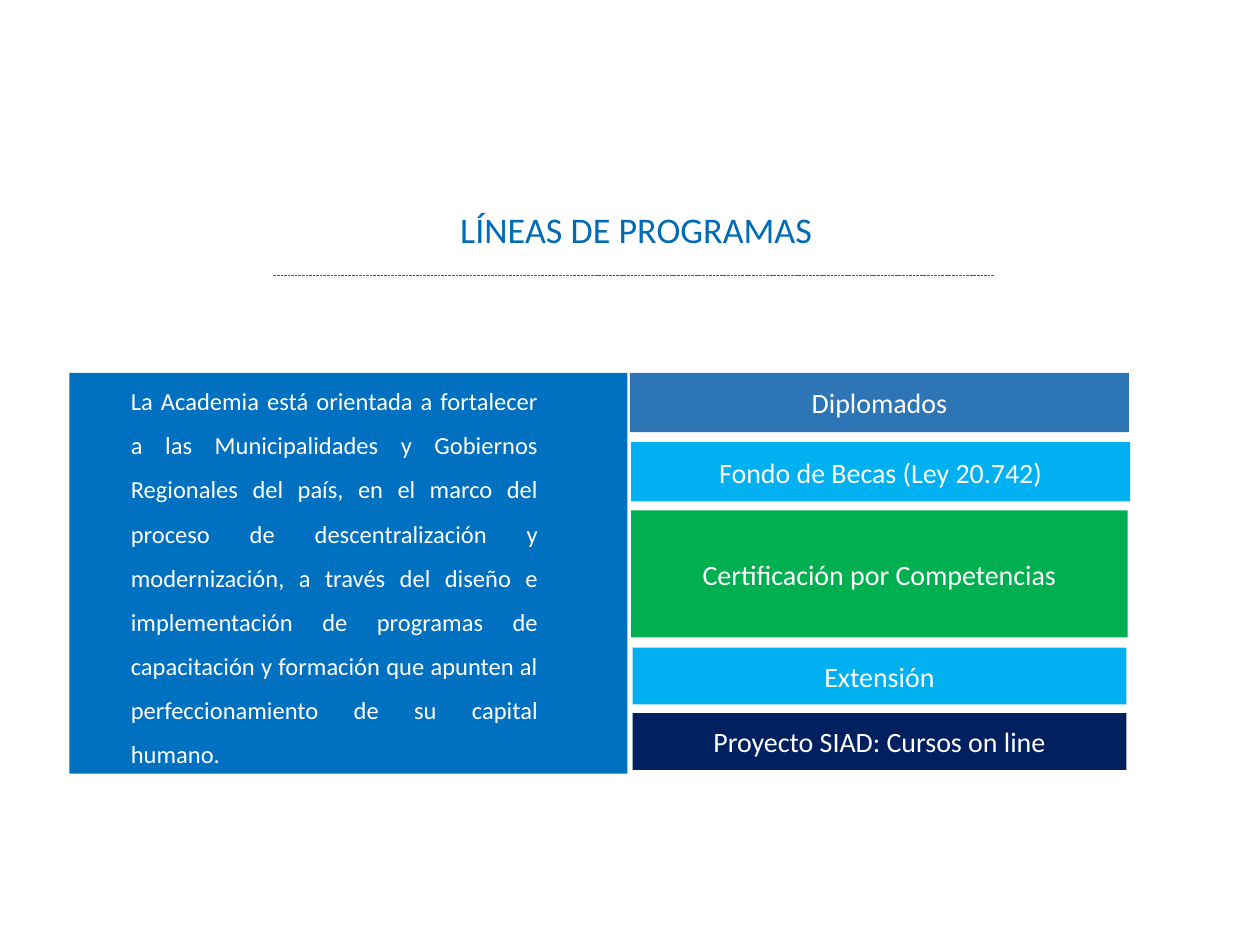
from dataclasses import dataclass

from lxml import etree
from pptx import Presentation, util as u
from pptx.dml.color import RGBColor
from pptx.enum import dml, shapes, text
from pptx.oxml.ns import qn

BLUE = RGBColor(0x00, 0x70, 0xC0)
TITLE_BLUE = RGBColor(0x00, 0x6B, 0xB6)
STEEL = RGBColor(0x2E, 0x75, 0xB6)
SKY = RGBColor(0x00, 0xB0, 0xF0)
GREEN = RGBColor(0x00, 0xB0, 0x50)
NAVY = RGBColor(0x00, 0x20, 0x60)
WHITE = RGBColor(0xFF, 0xFF, 0xFF)

MISSION = (
    "La Academia está orientada a fortalecer a las Municipalidades y Gobiernos "
    "Regionales del país, en el marco del proceso de descentralización y "
    "modernización, a través del diseño e implementación de programas de "
    "capacitación y formación que apunten al perfeccionamiento de su capital humano."
)


@dataclass
class Program:
    label: str
    left: float
    top: float
    width: float
    height: float
    color: RGBColor


PROGRAMS = [
    Program("Diplomados", 5, 2.96, 3.96, 0.47, STEEL),
    Program("Fondo de Becas (Ley 20.742)", 5.01, 3.51, 3.96, 0.47, SKY),
    Program("Certificación por Competencias", 5.01, 4.05, 3.94, 1.01, GREEN),
    Program("Extensión", 5.02, 5.14, 3.92, 0.45, SKY),
    Program("Proyecto SIAD: Cursos on line", 5.02, 5.66, 3.92, 0.45, NAVY),
]


def write(shape, words: str, size: float, color: RGBColor, align, spacing: float,
          anchor=text.MSO_ANCHOR.MIDDLE) -> None:
    frame = shape.text_frame
    frame.word_wrap = True
    frame.vertical_anchor = anchor
    paragraph = frame.paragraphs[0]
    paragraph.alignment = align
    paragraph.line_spacing = spacing
    run = paragraph.add_run()
    run.text = words
    formats = {"name": "Calibri", "size": u.Pt(size), "bold": False}
    for key, value in formats.items():
        setattr(run.font, key, value)
    run.font.color.rgb = color


def add_block(slide, left: float, top: float, width: float, height: float, color: RGBColor):
    block = slide.shapes.add_shape(shapes.MSO_SHAPE.RECTANGLE, u.Inches(left),
                                   u.Inches(top), u.Inches(width), u.Inches(height))
    block.shadow.inherit = False
    block.fill.solid()
    block.fill.fore_color.rgb = color
    block.line.fill.background()
    return block


def add_program(slide, program: Program) -> None:
    block = add_block(slide, program.left, program.top, program.width,
                      program.height, program.color)
    write(block, program.label, 16, WHITE, text.PP_ALIGN.CENTER, 1.0)


def add_rule(slide, left: float, right: float, y: float) -> None:
    rule = slide.shapes.add_connector(shapes.MSO_CONNECTOR.STRAIGHT, u.Inches(left),
                                      u.Inches(y), u.Inches(right), u.Inches(y))
    rule.line.color.rgb = TITLE_BLUE
    rule.line.width = u.Pt(0.5)
    rule.line.dash_style = dml.MSO_LINE.SQUARE_DOT
    etree.SubElement(rule._element.spPr, qn("a:effectLst"))


def main() -> None:
    deck = Presentation()
    deck.slide_width, deck.slide_height = u.Inches(10), u.Inches(7.5)
    slide = deck.slides.add_slide(deck.slide_layouts[5])

    # Mission panel background
    add_block(slide, 0.55, 2.96, 4.43, 3.18, BLUE)

    # Title and dashed rule
    title = slide.shapes.title
    place = {"left": 1.9, "top": 1.56, "width": 6.3, "height": 0.56}
    for key, value in place.items():
        setattr(title, key, u.Inches(value))
    write(title, "LÍNEAS DE PROGRAMAS", 20.6, TITLE_BLUE, text.PP_ALIGN.CENTER, 0.9)
    add_rule(slide, 2.17, 7.89, 2.19)

    # Program lines
    for program in PROGRAMS:
        add_program(slide, program)

    # Mission statement
    mission = slide.shapes.add_textbox(u.Inches(0.94), u.Inches(2.9),
                                       u.Inches(3.43), u.Inches(3.25))
    write(mission, MISSION, 14, WHITE, text.PP_ALIGN.JUSTIFY, 1.5, text.MSO_ANCHOR.TOP)
    mission.text_frame.auto_size = text.MSO_AUTO_SIZE.SHAPE_TO_FIT_TEXT

    deck.save("out.pptx")


if __name__ == "__main__":
    main()
